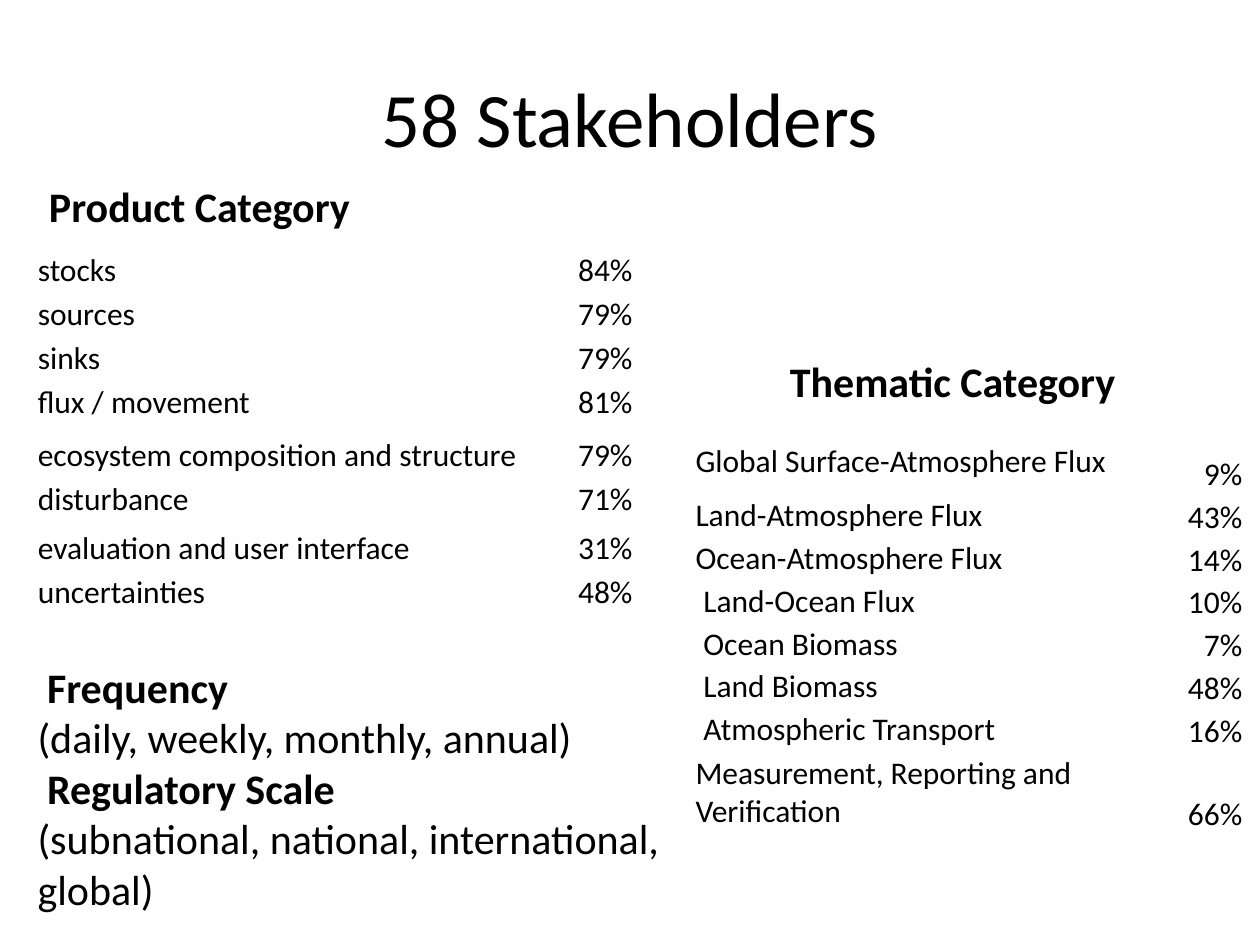
"""Build the slide that summarises the answers of 58 stakeholders."""
from pptx import Presentation
from pptx.dml.color import RGBColor
from pptx.enum.text import MSO_ANCHOR, MSO_AUTO_SIZE, PP_ALIGN
from pptx.util import Inches, Pt

LEFT, CENTER, RIGHT = PP_ALIGN.LEFT, PP_ALIGN.CENTER, PP_ALIGN.RIGHT
MIDDLE, BOTTOM = MSO_ANCHOR.MIDDLE, MSO_ANCHOR.BOTTOM
FIT_SHAPE = MSO_AUTO_SIZE.SHAPE_TO_FIT_TEXT
BLACK = "000000"
BODY_FONT, SPACE_FONT = "Calibri", "Times New Roman"
TITLE = "58 Stakeholders"

TABLES = [
    {
        "box": (5.02, 3.4, 4.85, 3.2),
        "columns": (4.03, 0.82),
        "label_indent": 0.5,
        "label_anchor": MIDDLE,
        "rows": [
            ("Global Surface-Atmosphere Flux", "9%", 0.52),
            ("Land-Atmosphere Flux", "43%", 0.34),
            ("Ocean-Atmosphere Flux", "14%", 0.34),
            (" Land-Ocean Flux", "10%", 0.34),
            (" Ocean Biomass", "7%", 0.34),
            (" Land Biomass", "48%", 0.34),
            (" Atmospheric Transport", "16%", 0.34),
            ("Measurement, Reporting and Verification", "66%", 0.66),
        ],
    },
    {
        "box": (0.29, 1.95, 4.73, 2.91),
        "columns": (3.85, 0.89),
        "label_indent": 0.01,
        "label_anchor": BOTTOM,
        "rows": [
            ("stocks", "84%", 0.35),
            ("sources", "79%", 0.35),
            ("sinks", "79%", 0.35),
            ("flux / movement", "81%", 0.35),
            ("ecosystem composition and structure", "79%", 0.42),
            ("disturbance", "71%", 0.35),
            ("evaluation and user interface", "31%", 0.39),
            ("uncertainties", "48%", 0.35),
        ],
    },
]

TEXT_BOXES = [
    ((6.17, 2.77, 2.82, 0.5), False, [("Thematic Category", True)]),
    ((0.29, 1.38, 4.49, 0.5), True, [("Product Category", True)]),
    ((0.2, 5.2, 5.2, 2.12), False, [
        (" Frequency", True),
        ("(daily, weekly, monthly, annual)", False),
        (" Regulatory Scale", True),
        ("(subnational, national, international,", False),
        ("global)", False),
    ]),
]


def write_text(paragraph, text, size=18, font=BODY_FONT, color=BLACK,
               bold=False, align=LEFT):
    """Add one formatted run to a paragraph."""
    paragraph.alignment = align
    run = paragraph.add_run()
    run.text = text
    run.font.size = Pt(size)
    run.font.name = font
    run.font.bold = bold
    run.font.color.rgb = RGBColor.from_string(color)


def format_cell(cell, anchor, left=0.01):
    """Clear the cell's fill and set its anchor and margins."""
    cell.fill.background()
    cell.vertical_anchor = anchor
    cell.margin_left = Inches(left)
    cell.margin_top = cell.margin_right = Inches(0.01)
    cell.margin_bottom = 0


def add_share_table(slide, box, columns, label_indent, label_anchor, rows):
    """Add a plain table of labels and percentages."""
    frame = slide.shapes.add_table(len(rows), len(columns), *map(Inches, box))
    table = frame.table
    table.first_row = table.horz_banding = False
    for column, width in zip(table.columns, columns):
        column.width = Inches(width)
    for row, (label, share, height) in zip(table.rows, rows):
        row.height = Inches(height)
        label_cell, share_cell = row.cells
        format_cell(label_cell, label_anchor, label_indent)
        format_cell(share_cell, BOTTOM)
        paragraph = label_cell.text_frame.paragraphs[0]
        if label.startswith(" "):
            write_text(paragraph, " ", font=SPACE_FONT)
        write_text(paragraph, label.lstrip())
        write_text(share_cell.text_frame.paragraphs[0], share, align=RIGHT)


def add_text_box(slide, box, wrap, lines):
    """Add a text box with one paragraph for each line."""
    frame = slide.shapes.add_textbox(*map(Inches, box)).text_frame
    frame.word_wrap = wrap
    frame.auto_size = FIT_SHAPE
    for index, (text, bold) in enumerate(lines):
        paragraph = frame.add_paragraph() if index else frame.paragraphs[0]
        write_text(paragraph, text, size=24, bold=bold)


def main():
    """Create the presentation and save it."""
    presentation = Presentation()
    presentation.slide_width, presentation.slide_height = Inches(10), Inches(7.5)
    slide = presentation.slides.add_slide(presentation.slide_layouts[5])
    title = slide.shapes.title
    title.left, title.top = Inches(0.5), Inches(0.3)
    title.width, title.height = Inches(9), Inches(1.25)
    title.text_frame.vertical_anchor = MIDDLE
    write_text(title.text_frame.paragraphs[0], TITLE, size=44, align=CENTER)
    for table in TABLES:
        add_share_table(slide, **table)
    for text_box in TEXT_BOXES:
        add_text_box(slide, *text_box)
    presentation.save("out.pptx")


if __name__ == "__main__":
    main()
